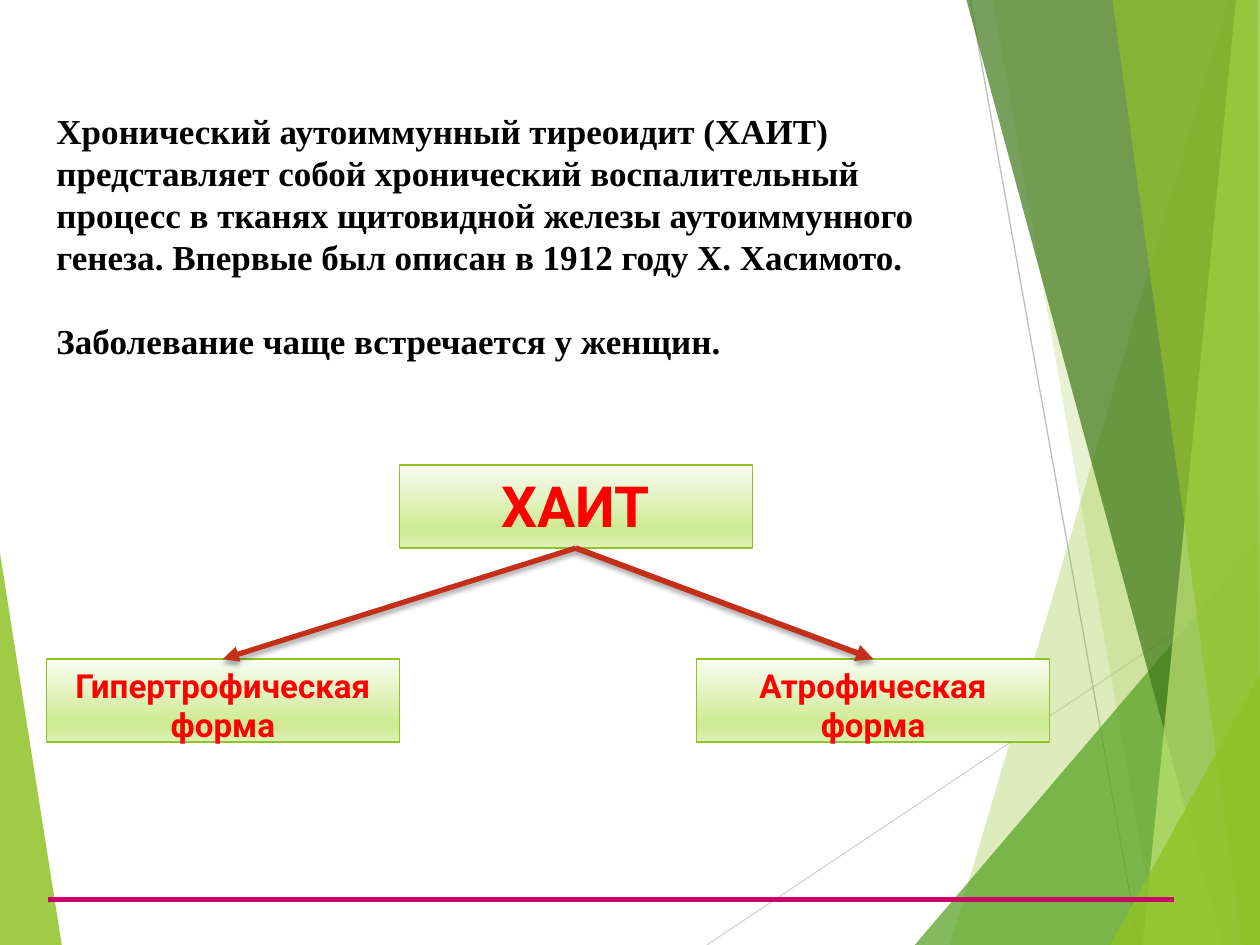
from dataclasses import dataclass, field
from typing import NamedTuple

from lxml.etree import SubElement
from pptx import Presentation
from pptx.dml.color import RGBColor
from pptx.enum.shapes import MSO_CONNECTOR as Connector, MSO_SHAPE as Preset
from pptx.enum.text import MSO_ANCHOR as Anchor, MSO_AUTO_SIZE as AutoSize, PP_ALIGN as Align
from pptx.oxml.ns import qn
from pptx.util import Inches, Pt


@dataclass(frozen=True)
class Theme:
    lime: str = "90C226"
    green: str = "54A021"
    forest: str = "3F7819"
    pale: str = "C0E474"
    rule: str = "CC0066"
    arrow: str = "C42F1A"
    ink: str = "000000"
    label: str = "FF0000"
    box_stops: tuple = ((0, "FAFDF3"), (74, "D0EB96"), (83, "D0EB96"), (100, "DFF1B9"))
    text_font: str = "Times New Roman"
    box_font: str = "Roboto"
    text_size: float = 20
    leading: float = 24
    root_size: float = 32.4
    form_size: float = 18.9


class Facet(NamedTuple):
    color: str
    opacity: int
    corners: tuple


class Stroke(NamedTuple):
    start: tuple
    end: tuple
    color: str
    width: float
    is_arrow: bool = False


@dataclass(frozen=True)
class Box:
    text: str
    col: float
    row: float
    size: float
    cols: float = field(default=28)
    rows: float = field(default=6.6)

    @property
    def top(self) -> tuple:
        return self.col + self.cols / 2, self.row

    @property
    def bottom(self) -> tuple:
        return self.col + self.cols / 2, self.row + self.rows


THEME = Theme()
COLS, ROWS = 100, 75

deck = Presentation()
deck.slide_width, deck.slide_height = Inches(10), Inches(7.5)
slide = deck.slides.add_slide(deck.slide_layouts[5])


def grid(*lengths: float) -> list:
    """Lengths in grid cells, as EMU."""
    return [round(n * deck.slide_width / COLS) for n in lengths]


def apply(target, formats: dict) -> None:
    for name, value in formats.items():
        setattr(target, name, value)


def draw_facet(facet: Facet) -> None:
    first, *rest = [tuple(grid(*corner)) for corner in facet.corners]
    outline = slide.shapes.build_freeform(*first, scale=1.0)
    outline.add_line_segments(rest, close=True)
    shape = outline.convert_to_shape()
    shape.shadow.inherit = False
    shape.fill.solid()
    shape.fill.fore_color.rgb = RGBColor.from_string(facet.color)
    color = shape.fill._xPr.find(".//" + qn("a:srgbClr"))
    SubElement(color, qn("a:alpha"), val=str(facet.opacity * 1000))
    shape.line.fill.background()


def draw_stroke(stroke: Stroke) -> None:
    line = slide.shapes.add_connector(Connector.STRAIGHT, *grid(*stroke.start, *stroke.end))
    line.line.color.rgb = RGBColor.from_string(stroke.color)
    line.line.width = Pt(stroke.width)
    properties = line._element.spPr
    effects = SubElement(properties, qn("a:effectLst"))
    if stroke.is_arrow:
        SubElement(properties.find(qn("a:ln")), qn("a:tailEnd"), type="triangle")
        shadow = SubElement(effects, qn("a:outerShdw"), blurRad=str(Pt(3)), dist=str(Pt(2)),
                            dir="5400000", rotWithShape="0")
        tint = SubElement(shadow, qn("a:srgbClr"), val=THEME.ink)
        SubElement(tint, qn("a:alpha"), val="35000")


def write(paragraph, text: str, font: str, size: float, color: str) -> None:
    run = paragraph.add_run()
    run.text = text
    apply(run.font, {"name": font, "size": Pt(size), "bold": True})
    run.font.color.rgb = RGBColor.from_string(color)


def draw_box(box: Box, shape=None) -> None:
    place = grid(box.col, box.row, box.cols, box.rows)
    if shape is None:
        shape = slide.shapes.add_shape(Preset.RECTANGLE, *place)
        shape.shadow.inherit = False
    apply(shape, dict(zip(("left", "top", "width", "height"), place)))
    shape.fill.gradient()
    shape.fill.gradient_angle = 270
    stops = shape._element.spPr.find(".//" + qn("a:gsLst"))
    stops.clear()
    for position, color in THEME.box_stops:
        stop = SubElement(stops, qn("a:gs"), pos=str(position * 1000))
        SubElement(stop, qn("a:srgbClr"), val=color)
    shape.line.color.rgb = RGBColor.from_string(THEME.lime)
    shape.line.width = Pt(0.75)
    apply(shape.text_frame, {"word_wrap": True, "auto_size": AutoSize.NONE,
                             "vertical_anchor": Anchor.TOP})
    label = shape.text_frame.paragraphs[0]
    label.alignment = Align.CENTER
    write(label, box.text, THEME.box_font, box.size, THEME.label)


# Background: left wedge, thin lines, then the right-hand facets
draw_facet(Facet(THEME.lime, 85, ((0, 43.9), (4.9, ROWS), (0, ROWS))))
for stroke in (
    Stroke((56.1, ROWS), (COLS, 45.7), "D9D9D9", 0.75),
    Stroke((77, 0), (90.4, ROWS), "BFBFBF", 0.75),
):
    draw_stroke(stroke)

right_edge = ((COLS, ROWS), (COLS, 0))
for facet in (
    Facet(THEME.lime, 30, ((97.5, 0), (75.4, ROWS), *right_edge)),
    Facet(THEME.lime, 20, ((78.8, 0), (91.9, ROWS), *right_edge)),
    Facet(THEME.green, 72, ((72.6, ROWS), (COLS, 42.9), (COLS, ROWS))),
    Facet(THEME.forest, 70, ((76.7, 0), (97, ROWS), *right_edge)),
    Facet(THEME.pale, 70, ((98.1, 0), (90.7, ROWS), *right_edge)),
    Facet(THEME.lime, 65, ((88.3, 0), (98.6, ROWS), (COLS, ROWS), (99.8, 0))),
    Facet(THEME.lime, 80, ((88.1, ROWS), (COLS, 53.5), (COLS, ROWS))),
):
    draw_facet(facet)

# Rule along the bottom
draw_stroke(Stroke((3.8, 71.4), (93.2, 71.4), THEME.rule, 3))

# Definition
definition = slide.shapes.add_textbox(*grid(3.5, 8.1, 74, 21.2)).text_frame
apply(definition, {"word_wrap": True, "vertical_anchor": Anchor.MIDDLE})
meaning, prevalence = definition.paragraphs[0], definition.add_paragraph()
for paragraph, text in (
    (meaning, "Хронический аутоиммунный тиреоидит (ХАИТ) представляет собой хронический "
              "воспалительный процесс в тканях щитовидной железы аутоиммунного генеза. "
              "Впервые был описан в 1912 году Х. Хасимото."),
    (prevalence, "Заболевание чаще встречается у женщин."),
):
    paragraph.line_spacing = Pt(THEME.leading)
    write(paragraph, text, THEME.text_font, THEME.text_size, THEME.ink)
prevalence.space_before = Pt(THEME.leading)

# Scheme: the disease and its two forms
disease = Box("ХАИТ", 31.7, 36.9, THEME.root_size)
atrophic = Box("Атрофическая форма", 55.3, 52.3, THEME.form_size)
hypertrophic = Box("Гипертрофическая форма", 3.7, 52.3, THEME.form_size)
draw_box(disease, slide.shapes.title)
for form in (atrophic, hypertrophic):
    draw_box(form)
for form, width in ((hypertrophic, 3), (atrophic, 3.25)):
    draw_stroke(Stroke(disease.bottom, form.top, THEME.arrow, width, is_arrow=True))

deck.save("out.pptx")
